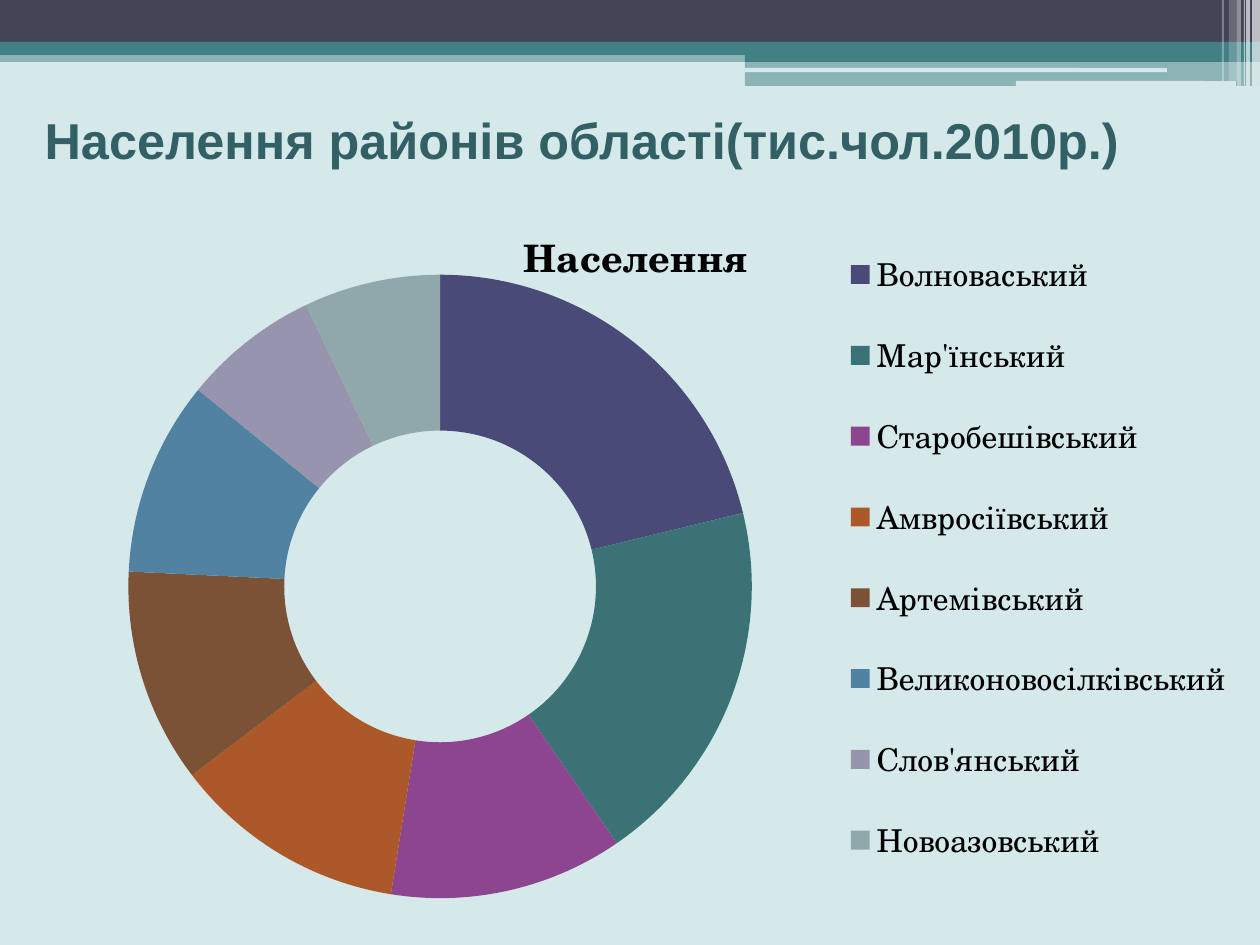
from lxml import etree
from pptx import Presentation
from pptx.chart.data import CategoryChartData
from pptx.dml.color import RGBColor
from pptx.enum.chart import XL_CHART_TYPE, XL_LEGEND_POSITION
from pptx.enum.shapes import MSO_SHAPE
from pptx.enum.text import MSO_ANCHOR, PP_ALIGN
from pptx.oxml.ns import qn
from pptx.util import Pt

EMU_PER_PX = 914400 / 126

PALE = RGBColor(0xD6, 0xE9, 0xEA)
TEAL = RGBColor(0x43, 0x80, 0x86)
SLATE = RGBColor(0x42, 0x44, 0x56)
WHITE = RGBColor(0xFF, 0xFF, 0xFF)
BLACK = RGBColor(0, 0, 0)
TITLE_TEAL = RGBColor(0x32, 0x60, 0x65)

CHART_FONT = "TeX Gyre Schola"

# District, population share, ring colour
DISTRICTS = [
    ("Волноваський", 21, RGBColor(0x4A, 0x4A, 0x78)),
    ("Мар'їнський", 19, RGBColor(0x3B, 0x72, 0x76)),
    ("Старобешівський", 12, RGBColor(0x8E, 0x45, 0x90)),
    ("Амвросіївський", 12, RGBColor(0xAD, 0x58, 0x28)),
    ("Артемівський", 11, RGBColor(0x7B, 0x52, 0x35)),
    ("Великоновосілківський", 10, RGBColor(0x51, 0x82, 0xA2)),
    ("Слов'янський", 7, RGBColor(0x96, 0x95, 0xAD)),
    ("Новоазовський", 7, RGBColor(0x90, 0xA8, 0xAB)),
]

# Left, top, width, height, colour, opacity in percent
BANDS = [
    (0, 50, 1260, 12, TEAL, 50),
    (0, 0, 1260, 42, SLATE, 100),
    (0, 42, 1260, 13, TEAL, 100),
    (745, 49, 515, 13, TEAL, 100),
    (745, 61, 515, 25, TEAL, 50),
]
# Left, top, width, height
SLITS = [(745, 68, 422, 4), (1016, 81, 220, 5)]
# Left, width, height, opacity in percent
STRIPES = [
    (1252, 8, 86, 65),
    (1246, 4, 86, 65),
    (1244, 1, 86, 60),
    (1237, 4, 86, 40),
    (1229, 8, 81, 20),
    (1222, 2, 81, 30),
]


def px(length):
    return round(length * EMU_PER_PX)


def add_bar(slide, box, color, opacity=100, preset=MSO_SHAPE.RECTANGLE):
    bar = slide.shapes.add_shape(preset, *map(px, box))
    bar.shadow.inherit = False
    bar.line.fill.background()
    bar.fill.solid()
    bar.fill.fore_color.rgb = color
    if opacity < 100:
        color_tag = bar.fill._xPr.find(".//" + qn("a:srgbClr"))
        etree.SubElement(color_tag, qn("a:alpha")).set("val", str(opacity * 1000))


def add_header(slide):
    for *box, color, opacity in BANDS:
        add_bar(slide, box, color, opacity)
    for box in SLITS:
        add_bar(slide, box, PALE, preset=MSO_SHAPE.ROUNDED_RECTANGLE)
    for left, width, height, opacity in STRIPES:
        add_bar(slide, (left, 0, width, height), WHITE, opacity)


def style_font(font, size, color, name, bold=False):
    font.size = Pt(size)
    font.color.rgb = color
    font.name = name
    font.bold = bold


def add_heading(slide, text):
    heading = slide.shapes.add_textbox(px(15), px(96), px(1134), px(87))
    frame = heading.text_frame
    frame.word_wrap = True
    frame.vertical_anchor = MSO_ANCHOR.MIDDLE
    frame.text = text
    paragraph = frame.paragraphs[0]
    paragraph.alignment = PP_ALIGN.CENTER
    style_font(paragraph.runs[0].font, 28.8, TITLE_TEAL, "Arial", bold=True)


def place_manually(part, x, y, w, h, inner=False):
    """Fix a chart part's place, as fractions of the chart frame."""
    layout = part.find(qn("c:layout"))
    if layout is None:
        layout = etree.Element(qn("c:layout"))
        position = part.find(qn("c:legendPos"))
        part.insert(0 if position is None else part.index(position) + 1, layout)
    manual = etree.SubElement(layout, qn("c:manualLayout"))
    settings = [("layoutTarget", "inner")] if inner else []
    settings += [("xMode", "edge"), ("yMode", "edge"),
                 ("x", x), ("y", y), ("w", w), ("h", h)]
    for tag, value in settings:
        etree.SubElement(manual, qn("c:" + tag)).set("val", str(value))


def add_population_chart(slide):
    names, shares, colors = zip(*DISTRICTS)
    data = CategoryChartData()
    data.categories = names
    data.add_series("Населення", shares)
    chart = slide.shapes.add_chart(
        XL_CHART_TYPE.DOUGHNUT, px(25), px(195), px(1221), px(725), data
    ).chart
    style_font(chart.font, 18, BLACK, CHART_FONT)

    # Title
    chart.has_title = True
    chart.chart_title.include_in_layout = False
    title_frame = chart.chart_title.text_frame
    title_frame.text = "Населення"
    style_font(title_frame.paragraphs[0].runs[0].font, 21.6, BLACK, CHART_FONT, bold=True)

    # Ring
    plot = chart.plots[0]
    plot.vary_by_categories = True
    plot._element.find(qn("c:holeSize")).set("val", "50")
    for index, color in enumerate(colors):
        segment = plot.series[0].points[index].format
        segment.fill.solid()
        segment.fill.fore_color.rgb = color
        segment.line.fill.background()
    place_manually(chart._chartSpace.chart.plotArea, 0.08, 0.11, 0.52, 0.86, inner=True)

    # Legend
    chart.has_legend = True
    chart.legend.position = XL_LEGEND_POSITION.RIGHT
    chart.legend.include_in_layout = False
    style_font(chart.legend.font, 18, BLACK, CHART_FONT)
    place_manually(chart.legend._element, 0.67, 0.03, 0.32, 0.94)


def main():
    presentation = Presentation()
    presentation.slide_width = px(1260)
    presentation.slide_height = px(945)
    slide = presentation.slides.add_slide(presentation.slide_layouts[6])
    slide.background.fill.solid()
    slide.background.fill.fore_color.rgb = PALE

    add_header(slide)
    add_heading(slide, "Населення районів області(тис.чол.2010р.)")
    add_population_chart(slide)
    presentation.save("out.pptx")


if __name__ == "__main__":
    main()
